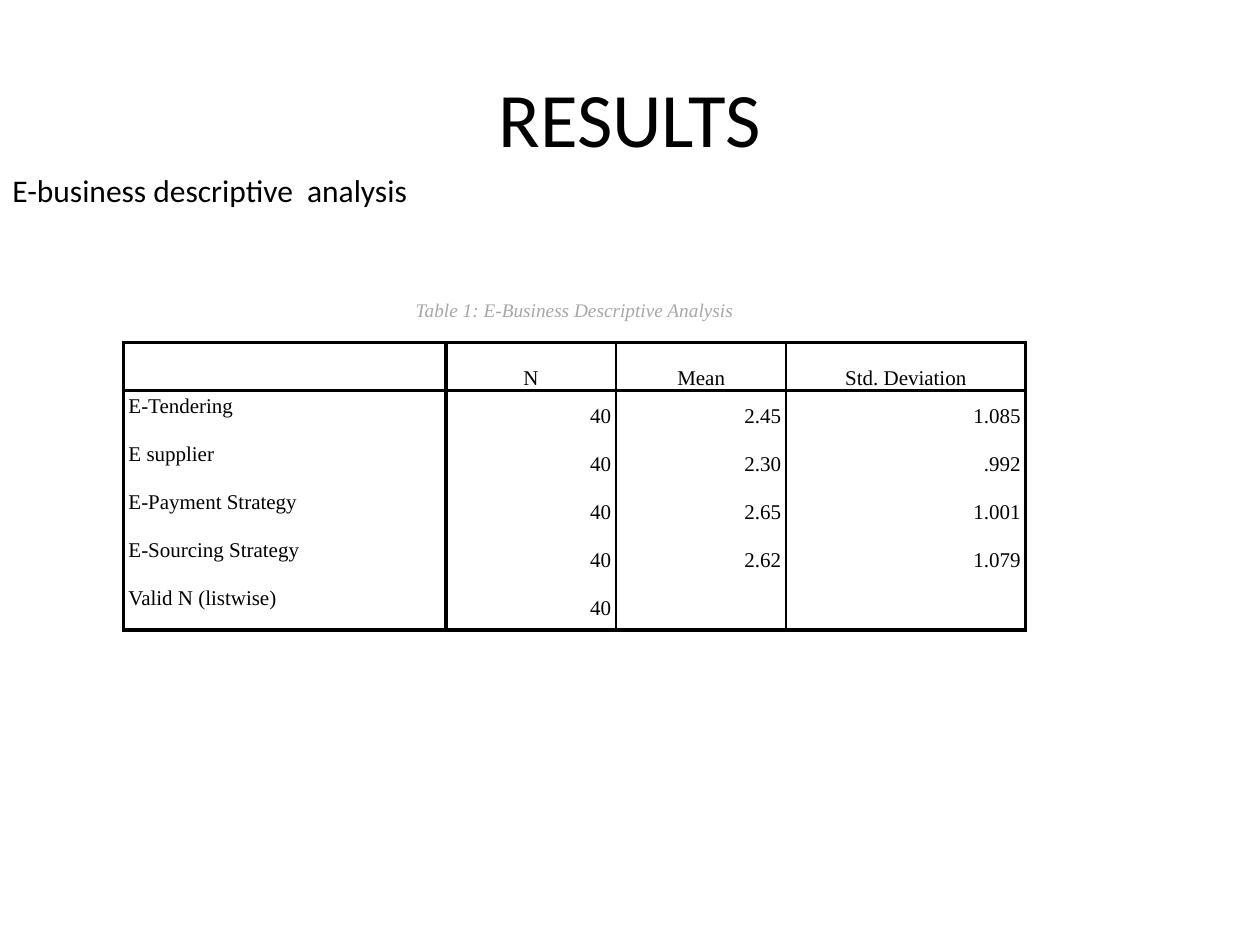
from dataclasses import dataclass

import pptx
import pptx.dml.color
import pptx.enum.text
import pptx.oxml
import pptx.oxml.ns
import pptx.util
from pptx.util import Inches

ALIGN = pptx.enum.text.PP_ALIGN
ANCHOR = pptx.enum.text.MSO_ANCHOR


@dataclass(frozen=True)
class Theme:
    sans: str = "Calibri"
    serif: str = "Times New Roman"
    black: str = "000000"
    gray: str = "A7A7A7"
    white: str = "FFFFFF"
    title_size: int = 44
    subtitle_size: int = 18
    caption_size: int = 11
    cell_size: int = 12
    line_spacing: int = 16
    thick: float = 2.25
    thin: float = 1


THEME = Theme()


@dataclass(frozen=True)
class TextStyle:
    font: str
    size: int
    color: str = THEME.black
    italic: bool = False


@dataclass(frozen=True)
class Label:
    text: str
    left: float
    top: float
    width: float
    height: float
    style: TextStyle
    align: ALIGN = ALIGN.LEFT
    anchor: ANCHOR = ANCHOR.TOP


CAPTION_STYLE = TextStyle(THEME.serif, THEME.caption_size, THEME.gray, True)
CELL_STYLE = TextStyle(THEME.serif, THEME.cell_size)

LABELS = [
    Label("RESULTS", 0.5, 0.3, 9, 1.25, TextStyle(THEME.sans, THEME.title_size),
          ALIGN.CENTER, ANCHOR.MIDDLE),
    Label("E-business descriptive  analysis", 0, 1.31, 4.37, 0.4,
          TextStyle(THEME.sans, THEME.subtitle_size)),
]

CAPTION = "Table 1: E-Business Descriptive Analysis"
ROWS = [
    ("", "N", "Mean", "Std. Deviation"),
    ("E-Tendering", "40", "2.45", "1.085"),
    ("E supplier", "40", "2.30", ".992"),
    ("E-Payment Strategy", "40", "2.65", "1.001"),
    ("E-Sourcing Strategy", "40", "2.62", "1.079"),
    ("Valid N (listwise)", "40", "", ""),
]
COLUMN_WIDTHS = [2.56, 1.35, 1.35, 1.9]
CAPTION_HEIGHT, ROW_HEIGHT = 0.86, 0.38

# Rule widths at the column edges, left to right, and at the row edges
COLUMN_RULES = [THEME.thick, THEME.thick, THEME.thin, THEME.thin, THEME.thick]
ROW_RULES = [0, THEME.thick, THEME.thick, 0, 0, 0, 0, THEME.thick]


def add_span(para, text: str, style: TextStyle) -> None:
    span = para.add_run()
    span.text = text
    span.font.name = style.font
    span.font.size = pptx.util.Pt(style.size)
    span.font.italic = style.italic
    span.font.color.rgb = pptx.dml.color.RGBColor.from_string(style.color)


def add_label(page, label: Label) -> None:
    box = page.shapes.add_textbox(Inches(label.left), Inches(label.top),
                                  Inches(label.width), Inches(label.height))
    frame = box.text_frame
    frame.word_wrap = True
    frame.vertical_anchor = label.anchor
    para = frame.paragraphs[0]
    para.alignment = label.align
    add_span(para, label.text, label.style)


def set_borders(cell, left: float, right: float, top: float, bottom: float) -> None:
    """Draw the cell's edges; a width of 0 means no line."""
    properties = cell._tc.get_or_add_tcPr()
    namespace = pptx.oxml.ns.nsdecls("a")
    for side, width in zip("LRTB", (left, right, top, bottom)):
        paint = (f'<a:solidFill><a:srgbClr val="{THEME.black}"/></a:solidFill>'
                 if width else "<a:noFill/>")
        properties.append(pptx.oxml.parse_xml(
            f'<a:ln{side} {namespace} w="{int(pptx.util.Pt(width))}">{paint}</a:ln{side}>'))


def fill_white(cell) -> None:
    cell.fill.solid()
    cell.fill.fore_color.rgb = pptx.dml.color.RGBColor.from_string(THEME.white)


def write_cell(cell, text: str, style: TextStyle, align: ALIGN, anchor: ANCHOR,
               side_margin: float = 0, bottom_margin: float = 0):
    cell.margin_left = cell.margin_right = Inches(side_margin)
    cell.margin_top, cell.margin_bottom = 0, Inches(bottom_margin)
    cell.vertical_anchor = anchor
    para = cell.text_frame.paragraphs[0]
    para.alignment = align
    if text:
        add_span(para, text, style)
    return para


def cell_layout(row: int, column: int) -> tuple[ALIGN, ANCHOR]:
    if row == 0:
        return ALIGN.CENTER, ANCHOR.BOTTOM
    if column == 0:
        return ALIGN.LEFT, ANCHOR.TOP
    return ALIGN.RIGHT, ANCHOR.MIDDLE


def add_results_table(page, left: float, top: float) -> None:
    height = CAPTION_HEIGHT + ROW_HEIGHT * len(ROWS)
    table = page.shapes.add_table(
        len(ROWS) + 1, len(COLUMN_WIDTHS), Inches(left), Inches(top),
        Inches(sum(COLUMN_WIDTHS)), Inches(height)).table
    table.first_row = table.horz_banding = False
    for column, width in zip(table.columns, COLUMN_WIDTHS):
        column.width = Inches(width)
    for row in table.rows:
        row.height = Inches(ROW_HEIGHT)
    table.rows[0].height = Inches(CAPTION_HEIGHT)

    # Caption row across all columns
    for column in range(len(COLUMN_WIDTHS)):
        cell = table.cell(0, column)
        set_borders(cell, 0, 0, ROW_RULES[0], ROW_RULES[1])
        fill_white(cell)
    table.cell(0, 0).merge(table.cell(0, len(COLUMN_WIDTHS) - 1))
    write_cell(table.cell(0, 0), CAPTION, CAPTION_STYLE, ALIGN.CENTER,
               ANCHOR.BOTTOM, bottom_margin=0.17)

    # Header and data rows
    for row, values in enumerate(ROWS):
        for column, text in enumerate(values):
            cell = table.cell(row + 1, column)
            set_borders(cell, COLUMN_RULES[column], COLUMN_RULES[column + 1],
                        ROW_RULES[row + 1], ROW_RULES[row + 2])
            fill_white(cell)
            align, anchor = cell_layout(row, column)
            para = write_cell(cell, text, CELL_STYLE, align, anchor, side_margin=0.04)
            para.line_spacing = pptx.util.Pt(THEME.line_spacing)


def main() -> None:
    deck = pptx.Presentation()
    deck.slide_width, deck.slide_height = Inches(10), Inches(7.5)
    page = deck.slides.add_slide(deck.slide_layouts[6])
    for label in LABELS:
        add_label(page, label)
    add_results_table(page, 0.98, 1.86)
    deck.save("out.pptx")


if __name__ == "__main__":
    main()
